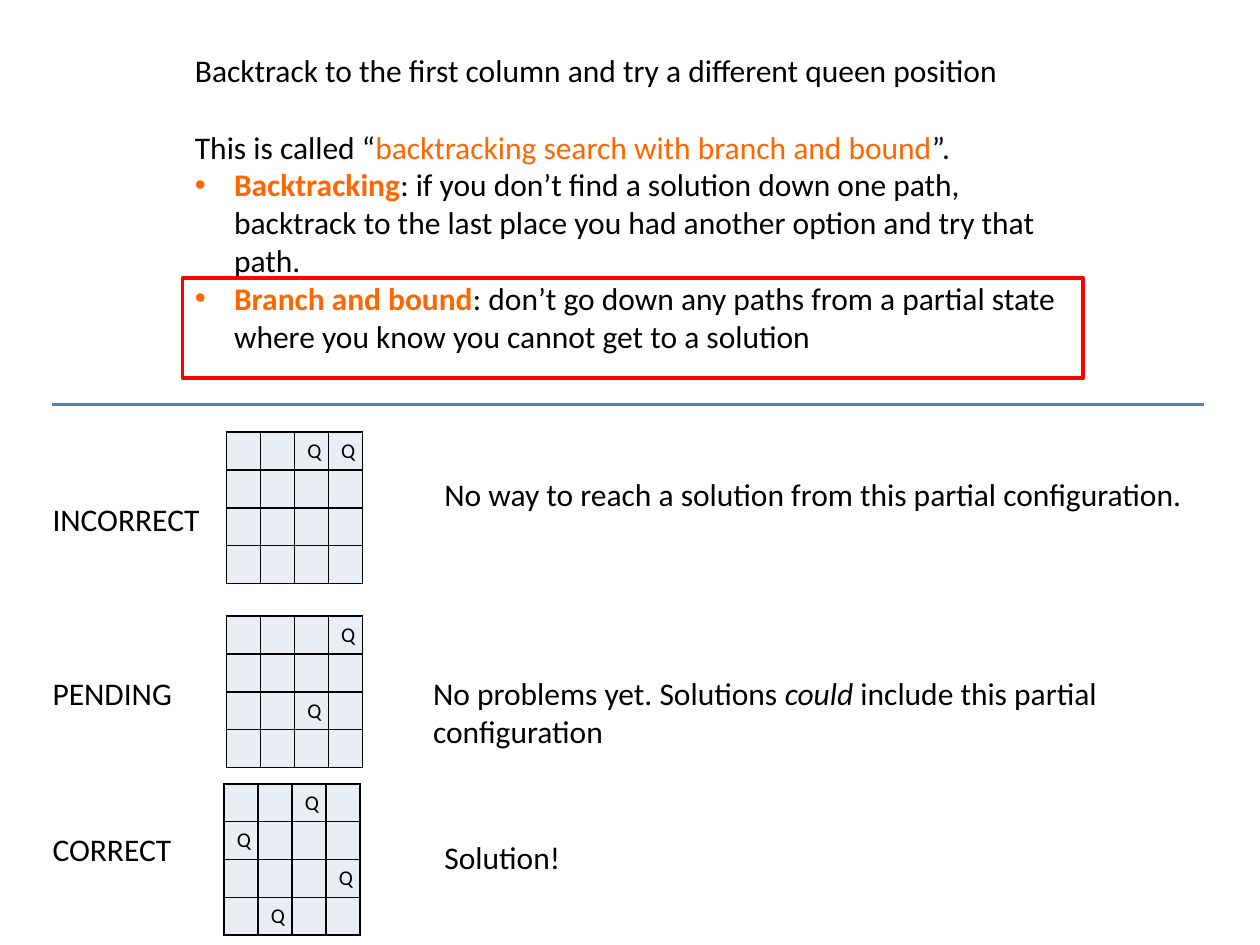
from dataclasses import dataclass

from lxml.etree import SubElement
from pptx import Presentation
from pptx.dml.color import RGBColor as RGB
from pptx.enum.shapes import MSO_CONNECTOR as CONNECTOR, MSO_SHAPE as SHAPE
from pptx.enum.text import MSO_AUTO_SIZE as AUTO_SIZE
from pptx.oxml.ns import qn
from pptx.util import Cm, Pt


@dataclass(frozen=True)
class Theme:
    font: str = "Calibri"
    body: Pt = Pt(18)
    queen: Pt = Pt(12)
    blank_line: Pt = Pt(22)
    text: RGB = RGB(0, 0, 0)
    accent: RGB = RGB(0xFF, 0x66, 0x00)
    divider: RGB = RGB(0x4F, 0x81, 0xBD)
    frame: RGB = RGB(0xFF, 0, 0)
    cell: RGB = RGB(0xE9, 0xED, 0xF4)
    grid: RGB = RGB(0, 0, 0)


class SlideBuilder:
    def __init__(self, s, theme):
        self.s = s
        self.theme = theme

    def run(self, p, text, marks=""):
        """Add a run; marks may hold a (accent), b (bold) and i (italic)."""
        r = p.add_run()
        r.text = text
        font = r.font
        font.name, font.size = self.theme.font, self.theme.body
        font.color.rgb = self.theme.accent if "a" in marks else self.theme.text
        font.bold, font.italic = "b" in marks, "i" in marks

    def bullet(self, p):
        pPr = p._p.get_or_add_pPr()
        pPr.set("marL", str(Cm(0.79)))
        pPr.set("indent", str(-Cm(0.79)))
        SubElement(pPr, qn("a:buFont"), typeface="Arial")
        SubElement(pPr, qn("a:buChar"), char="•")

    def text(self, x, y, w, h, *paragraphs, wrap=True):
        """Each paragraph is a list of (text, marks) runs."""
        tf = self.s.shapes.add_textbox(Cm(x), Cm(y), Cm(w), Cm(h)).text_frame
        tf.word_wrap = wrap
        tf.auto_size = AUTO_SIZE.SHAPE_TO_FIT_TEXT
        for i, runs in enumerate(paragraphs):
            p = tf.add_paragraph() if i else tf.paragraphs[0]
            for run in runs:
                self.run(p, *run)
        return tf

    def divider(self, x1, x2, y):
        line = self.s.shapes.add_connector(
            CONNECTOR.STRAIGHT, Cm(x1), Cm(y), Cm(x2), Cm(y))
        line.line.color.rgb = self.theme.divider
        line.line.width = Pt(2)
        SubElement(line._element.spPr, qn("a:effectLst"))

    def frame(self, x, y, w, h):
        sp = self.s.shapes.add_shape(SHAPE.RECTANGLE, Cm(x), Cm(y), Cm(w), Cm(h))
        sp.shadow.inherit = False
        sp.fill.background()
        sp.line.color.rgb = self.theme.frame
        sp.line.width = Pt(2.25)

    def borders(self, cell):
        tcPr = cell._tc.get_or_add_tcPr()
        for side in ("lnL", "lnR", "lnT", "lnB"):
            ln = SubElement(tcPr, qn(f"a:{side}"), w=str(Pt(1)))
            fill = SubElement(ln, qn("a:solidFill"))
            SubElement(fill, qn("a:srgbClr"), val=str(self.theme.grid))

    def board(self, x, y, rows):
        """Draw a chessboard from strings, where Q is a queen and . is empty."""
        n = len(rows)
        table = self.s.shapes.add_table(
            n, n, Cm(x), Cm(y), Cm(0.685 * n), Cm(0.76 * n)).table
        for i, row in enumerate(rows):
            for j, mark in enumerate(row):
                cell = table.cell(i, j)
                self.borders(cell)
                cell.fill.solid()
                cell.fill.fore_color.rgb = self.theme.cell
                p = cell.text_frame.paragraphs[0]
                if mark == "Q":
                    self.run(p, mark)
                    p.runs[0].font.size = self.theme.queen
                else:  # an empty cell takes its height from the end mark
                    size = str(int(self.theme.queen.pt * 100))
                    SubElement(p._p, qn("a:endParaRPr"), sz=size)


def main():
    prs = Presentation()
    prs.slide_width, prs.slide_height = Cm(25.4), Cm(19.05)
    b = SlideBuilder(prs.slides.add_slide(prs.slide_layouts[6]), Theme())

    intro = b.text(
        3.68, 0.91, 18.39, 6.4,
        [("Backtrack to the first column and try a different queen position",)],
        [("This is called “",),
         ("backtracking search with branch and bound", "a"), ("”.",)],
        [("Backtracking", "ab"),
         (": if you don’t find a solution down one path, backtrack to the "
          "last place you had another option and try that path.",)],
        [("Branch and bound", "ab"),
         (": don’t go down any paths from a partial state where you know "
          "you cannot get to a solution",)])
    intro.paragraphs[1].space_before = b.theme.blank_line
    for p in intro.paragraphs[2:]:
        b.bullet(p)

    b.divider(1.04, 24.28, 8.15)
    b.frame(3.68, 5.61, 18.16, 2.01)

    b.board(4.57, 8.71, ["..QQ", "....", "....", "...."])
    b.board(4.57, 12.42, ["...Q", "....", "..Q.", "...."])
    b.board(4.52, 15.8, ["..Q.", "Q...", "...Q", ".Q.."])

    for label, y, w in (("INCORRECT", 9.96, 3.53), ("PENDING", 13.46, 2.95),
                        ("CORRECT", 16.61, 2.95)):
        b.text(0.81, y, w, 1.02, [(label,)], wrap=False)

    b.text(8.71, 9.45, 15.6, 1.02,
           [("No way to reach a solution from this partial configuration.",)],
           wrap=False)
    b.text(8.48, 13.46, 14.88, 1.8,
           [("No problems yet. Solutions ",), ("could", "i"),
            (" include this partial configuration",)])
    b.text(8.71, 16.76, 2.87, 1.02, [("Solution!",)], wrap=False)

    prs.save("out.pptx")


if __name__ == "__main__":
    main()
